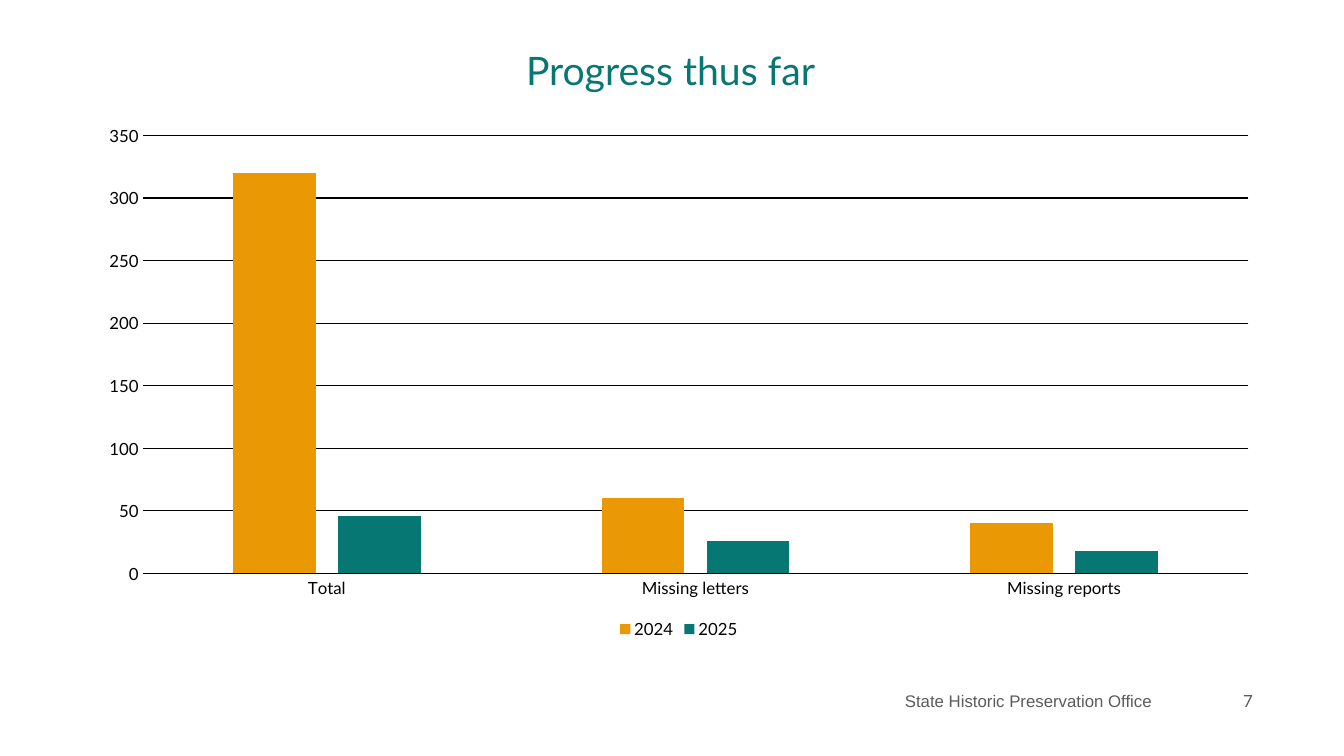
"""Build the progress slide: a title, a clustered column chart and a footer."""
from dataclasses import dataclass

from pptx import Presentation
from pptx.chart.data import CategoryChartData
from pptx.dml.color import RGBColor
from pptx.enum.chart import XL_CHART_TYPE, XL_LEGEND_POSITION, XL_TICK_MARK
from pptx.enum.text import MSO_ANCHOR, MSO_AUTO_SIZE, PP_ALIGN
from pptx.util import Pt

COLUMNS = XL_CHART_TYPE.COLUMN_CLUSTERED
LEGEND_BOTTOM = XL_LEGEND_POSITION.BOTTOM
NO_TICK = XL_TICK_MARK.NONE
TOP, MIDDLE = MSO_ANCHOR.TOP, MSO_ANCHOR.MIDDLE
FIXED = MSO_AUTO_SIZE.NONE
CENTER, RIGHT = PP_ALIGN.CENTER, PP_ALIGN.RIGHT

COLORS = {"teal": "077774", "amber": "EA9804", "gray": "5A5B5D", "black": "000000"}
TITLE_ONLY = 5


@dataclass(frozen=True)
class Area:
    """A rectangle on the slide, in points."""
    left: float
    top: float
    width: float
    height: float

    def lengths(self):
        """Return the four lengths that python-pptx expects."""
        return Pt(self.left), Pt(self.top), Pt(self.width), Pt(self.height)


@dataclass(frozen=True)
class Year:
    """One series of the chart."""
    name: str
    values: tuple[int, ...]
    color: str


@dataclass(frozen=True)
class FooterItem:
    """One text at the foot of the slide."""
    text: str
    area: Area
    font: str


TITLE_AREA = Area(51, 41, 856, 42)
CHART_AREA = Area(61.2, 82.1, 847.4, 377.3)
CATEGORIES = ("Total", "Missing letters", "Missing reports")
YEARS = (
    Year("2024", (320, 60, 40), "amber"),
    Year("2025", (46, 26, 18), "teal"),
)
FOOTER = (
    FooterItem("State Historic Preservation Office", Area(480, 486, 350, 29), "Arial"),
    FooterItem("7", Area(830, 486, 72, 29), "Lato"),
)


def rgb(name: str) -> RGBColor:
    """Return a named colour."""
    return RGBColor.from_string(COLORS[name])


def style_font(font, *, size: float, color: str, name: str = "Lato") -> None:
    """Set the face, size and colour of a font."""
    font.name, font.size, font.bold = name, Pt(size), False
    font.color.rgb = rgb(color)


def write_text(box, text: str, *, size: float, color: str, name: str = "Lato",
               align=CENTER, anchor=TOP, spacing: float | None = None) -> None:
    """Write one formatted paragraph into a box."""
    frame = box.text_frame
    frame.word_wrap = True
    frame.auto_size = FIXED
    frame.vertical_anchor = anchor
    para = frame.paragraphs[0]
    para.alignment = align
    para.space_before = Pt(0)
    if spacing is not None:
        para.line_spacing = Pt(spacing)
    span = para.add_run()
    span.text = text
    style_font(span.font, size=size, color=color, name=name)


def style_line(line, color: str) -> None:
    """Give a chart line its colour and width."""
    line.color.rgb = rgb(color)
    line.width = Pt(0.75)


def style_axis(axis) -> None:
    """Remove the tick marks and format the labels of an axis."""
    axis.major_tick_mark = axis.minor_tick_mark = NO_TICK
    style_font(axis.tick_labels.font, size=12, color="black")


def add_progress_chart(page) -> None:
    """Add the column chart that compares both years."""
    data = CategoryChartData()
    data.categories = CATEGORIES
    for year in YEARS:
        data.add_series(year.name, year.values)
    chart = page.shapes.add_chart(COLUMNS, *CHART_AREA.lengths(), data).chart
    style_font(chart.font, size=10, color="teal")
    chart.has_title = False

    plot = chart.plots[0]
    plot.vary_by_categories = False
    plot.gap_width, plot.overlap = 219, -27
    for series, year in zip(plot.series, YEARS):
        series.format.fill.solid()
        series.format.fill.fore_color.rgb = rgb(year.color)

    style_axis(chart.category_axis)
    style_line(chart.category_axis.format.line, "black")
    counts = chart.value_axis
    style_axis(counts)
    counts.minimum_scale, counts.maximum_scale, counts.major_unit = 0, 350, 50
    counts.format.line.fill.background()
    counts.has_major_gridlines = True
    style_line(counts.major_gridlines.format.line, "black")

    chart.has_legend = True
    chart.legend.position = LEGEND_BOTTOM
    chart.legend.include_in_layout = False
    style_font(chart.legend.font, size=12, color="black")


def main() -> None:
    """Build and save the deck."""
    deck = Presentation()
    deck.slide_width, deck.slide_height = Pt(960), Pt(540)
    page = deck.slides.add_slide(deck.slide_layouts[TITLE_ONLY])

    title = page.shapes.title
    title.left, title.top, title.width, title.height = TITLE_AREA.lengths()
    write_text(title, "Progress thus far", size=28, color="teal", spacing=22)

    for item in FOOTER:
        box = page.shapes.add_textbox(*item.area.lengths())
        write_text(box, item.text, size=12, color="gray", name=item.font,
                   align=RIGHT, anchor=MIDDLE)

    add_progress_chart(page)
    deck.save("out.pptx")


if __name__ == "__main__":
    main()
